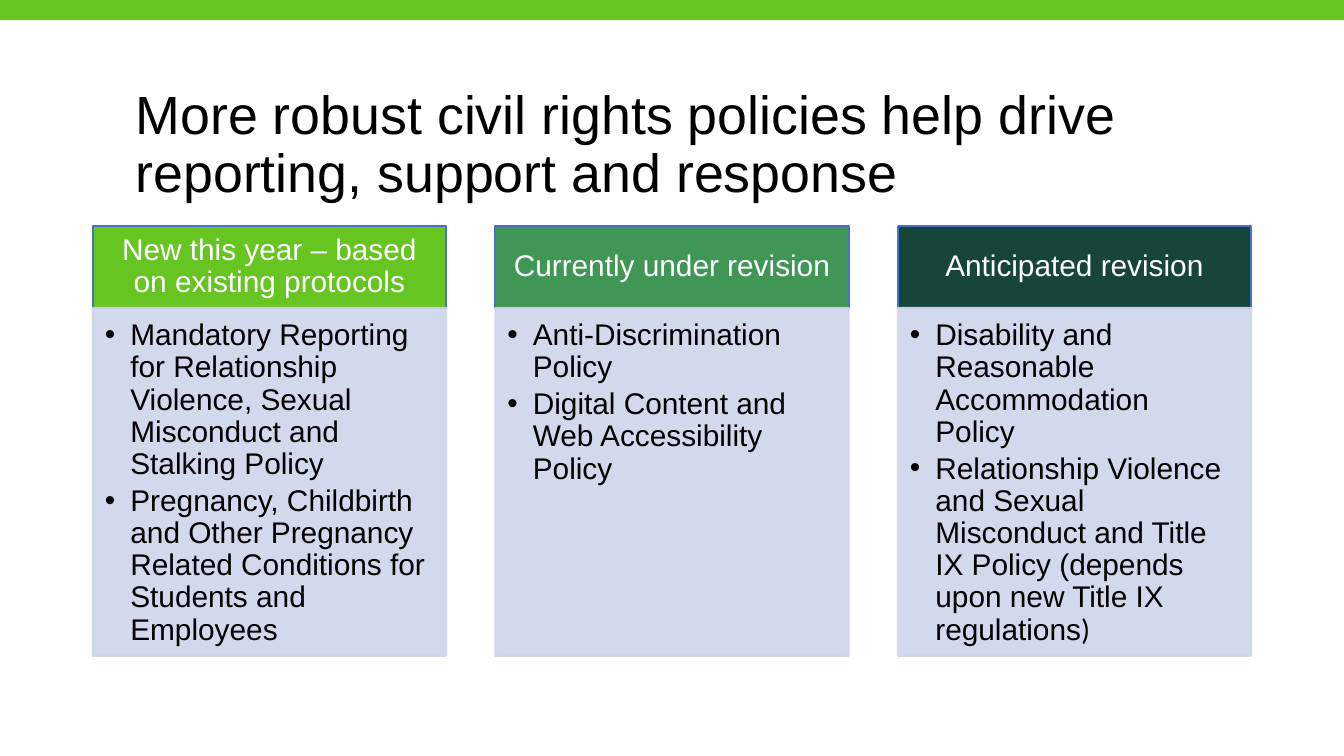
from lxml.etree import SubElement
from pptx import Presentation
from pptx.dml.color import RGBColor
from pptx.enum.shapes import MSO_SHAPE as Shape
from pptx.enum.text import MSO_ANCHOR as Anchor, PP_ALIGN as Align
from pptx.oxml.ns import qn
from pptx.util import Inches, Pt

TITLE = "More robust civil rights policies help drive reporting, support and response"
# Each column: heading, heading fill, bullets; a bullet is a list of (text, font) runs
COLUMNS = [
    ("New this year – based on existing protocols", "67C521", [
        [("Mandatory Reporting for Relationship Violence, Sexual Misconduct "
          "and Stalking Policy", "Arial")],
        [("Pregnancy, Childbirth and Other Pregnancy Related Conditions "
          "for Students and Employees", "Arial")],
    ]),
    ("Currently under revision", "409755", [
        [("Anti-Discrimination Policy", "Arial")],
        [("Digital Content and Web Accessibility Policy", "Arial")],
    ]),
    ("Anticipated revision", "18453B", [
        [("Disability and Reasonable Accommodation Policy", "Arial")],
        [("Relationship Violence and Sexual Misconduct and Title IX Policy "
          "(depends upon new Title IX regulations", "Arial"), (")", "Calibri")],
    ]),
]
GREEN, BLUE, PALE, BLACK, WHITE = "67C521", "4472C4", "CFD5EA", "000000", "FFFFFF"
FIRST, LAST, WIDTH = 0.69, 6.68, 2.63
STEP = (LAST - FIRST) / (len(COLUMNS) - 1)
TOP, HEAD, BODY = 1.68, 0.61, 2.59


def rgb(code):
    return RGBColor.from_string(code)


def fade(props):
    """Make the fill and the line 90% opaque."""
    for tag in props.iter(qn("a:srgbClr")):
        SubElement(tag, qn("a:alpha"), val="90000")


def add_box(slide, place, fill, line=None):
    box = slide.shapes.add_shape(Shape.RECTANGLE, *map(Inches, place))
    box.shadow.inherit = False
    box.fill.solid()
    box.fill.fore_color.rgb = rgb(fill)
    if line:
        box.line.color.rgb = rgb(line)
        box.line.width = Pt(1)
    else:
        box.line.fill.background()
    return box


def add_bullet(para):
    props = para._p.get_or_add_pPr()
    props.set("marL", str(Inches(0.19)))
    props.set("indent", str(Inches(-0.19)))
    SubElement(props, qn("a:buFont"), typeface="Arial")
    SubElement(props, qn("a:buChar"), char="•")


def write(shape, paras, size, color, insets, anchor, align=Align.LEFT, bullet=False):
    frame = shape.text_frame
    sides = ("margin_left", "margin_top", "margin_right", "margin_bottom")
    form = dict(zip(sides, map(Inches, insets)), word_wrap=True, vertical_anchor=anchor)
    for name, value in form.items():
        setattr(frame, name, value)
    for i, runs in enumerate(paras):
        para = frame.add_paragraph() if i else frame.paragraphs[0]
        if bullet:
            add_bullet(para)
        for name, value in {"alignment": align, "line_spacing": 0.9,
                            "space_after": Pt(2.4 if bullet else 0)}.items():
            setattr(para, name, value)
        for text, face in runs:
            run = para.add_run()
            run.text = text
            run.font.name, run.font.size = face, Pt(size)
            run.font.color.rgb = rgb(color)


deck = Presentation()
deck.slide_width = Inches(10)
deck.slide_height = deck.slide_width * 9 // 16
slide = deck.slides.add_slide(deck.slide_layouts[6])

add_box(slide, (0, 0, 10, 0.15), GREEN)
title = slide.shapes.add_textbox(*map(Inches, (0.91, 0.67, 8.73, 0.83)))
write(title, [[(TITLE, "Arial")]], 28.8, BLACK, (0.1, 0.05, 0.1, 0.05), Anchor.MIDDLE)

for i, (heading, fill, bullets) in enumerate(COLUMNS):
    x = FIRST + i * STEP
    head = add_box(slide, (x, TOP, WIDTH, HEAD), fill, BLUE)
    write(head, [[(heading, "Arial")]], 16, WHITE, (0.12, 0.07, 0.12, 0.07),
          Anchor.MIDDLE, Align.CENTER)
    body = add_box(slide, (x, TOP + HEAD, WIDTH, BODY), PALE, PALE)
    fade(body._element.spPr)
    write(body, bullets, 16, BLACK, (0.09, 0.09, 0.12, 0.14), Anchor.TOP, bullet=True)

deck.save("out.pptx")
